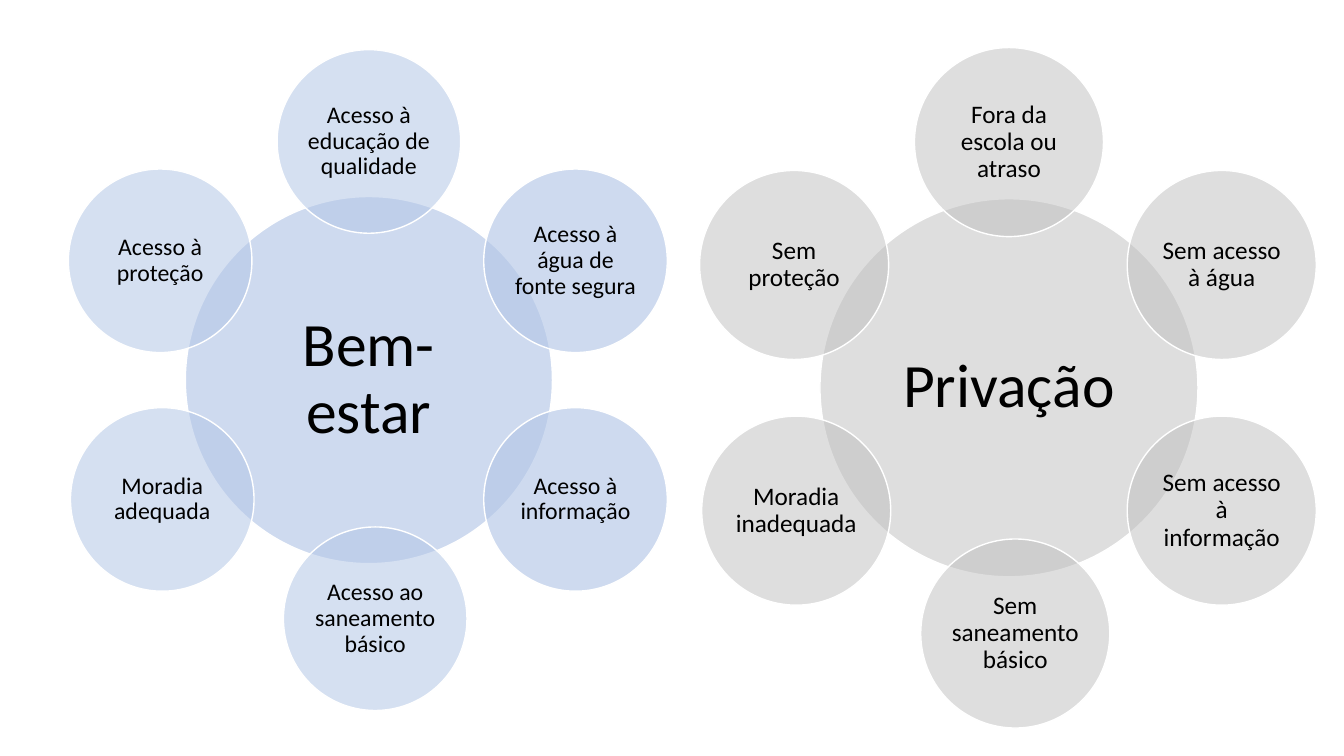
from dataclasses import dataclass
from math import cos, radians, sin

from lxml import etree
from pptx import Presentation
from pptx.dml.color import RGBColor
from pptx.enum.shapes import MSO_SHAPE
from pptx.enum.text import MSO_ANCHOR, PP_ALIGN
from pptx.oxml.ns import qn
from pptx.util import Pt

ELLIPSE = MSO_SHAPE.OVAL
MIDDLE = MSO_ANCHOR.MIDDLE
CENTER = PP_ALIGN.CENTER


@dataclass(frozen=True)
class Theme:
    font: str = "Calibri"
    text: str = "000000"
    outline: str = "FFFFFF"
    well_being: str = "B4C7E7"
    deprivation: str = "BFBFBF"
    hub_size: int = 44
    well_being_size: int = 17
    deprivation_size: int = 18


THEME = Theme()

# Diameters and distances as fractions of the hub's diameter
SATELLITE_RATIO = 0.5
ORBIT_RATIO = 0.65
HEIGHT_RATIO = 2 * ORBIT_RATIO + SATELLITE_RATIO

# Sideways shifts of the six satellites, clockwise from the top
NUDGES = (0, 0, 0, 4.5, 0, -1.5)


def write_text(shape, text, size, color=THEME.text, font=THEME.font):
    frame = shape.text_frame
    frame.word_wrap = True
    frame.vertical_anchor = MIDDLE
    inset = Pt(size * 0.1)
    frame.margin_left = frame.margin_right = inset
    frame.margin_top = frame.margin_bottom = inset
    paragraph = frame.paragraphs[0]
    paragraph.alignment = CENTER
    paragraph.line_spacing = 0.9
    run = paragraph.add_run()
    run.text = text
    run.font.name = font
    run.font.size = Pt(size)
    run.font.color.rgb = RGBColor.from_string(color)


def add_circle(shapes, center_x, center_y, diameter, text, size, color, opacity):
    left, top = center_x - diameter / 2, center_y - diameter / 2
    circle = shapes.add_shape(ELLIPSE, Pt(left), Pt(top), Pt(diameter), Pt(diameter))
    circle.shadow.inherit = False
    circle.fill.solid()
    circle.fill.fore_color.rgb = RGBColor.from_string(color)
    fill_color = circle.fill._xPr.find(qn("a:solidFill"))[0]
    etree.SubElement(fill_color, qn("a:alpha"), val=str(opacity * 1000))
    circle.line.color.rgb = RGBColor.from_string(THEME.outline)
    circle.line.width = Pt(1)
    write_text(circle, text, size)


def add_radial_diagram(slide, box, hub, satellites, size, color, opacity):
    """Place a hub and six overlapping satellites; each satellite is (text, opacity)."""
    left, top, width, height = box
    center_x, center_y = left + width / 2, top + height / 2
    diameter = height / HEIGHT_RATIO
    shapes = slide.shapes.add_group_shape().shapes
    add_circle(shapes, center_x, center_y, diameter, hub, THEME.hub_size, color, opacity)
    for index, (text, satellite_opacity) in enumerate(satellites):
        angle = radians(60 * index - 90)
        orbit = diameter * ORBIT_RATIO
        add_circle(shapes, center_x + orbit * cos(angle) + NUDGES[index],
                   center_y + orbit * sin(angle), diameter * SATELLITE_RATIO,
                   text, size, color, satellite_opacity)


def main():
    presentation = Presentation()
    presentation.slide_width, presentation.slide_height = Pt(960), Pt(540)
    slide = presentation.slides.add_slide(presentation.slide_layouts[6])
    add_radial_diagram(
        slide, (50.5, 35.5, 426, 472), "Bem-estar",
        [("Acesso à educação de qualidade", 55),
         ("Acesso à água de fonte segura", 65),
         ("Acesso à informação", 65),
         ("Acesso ao saneamento básico", 55),
         ("Moradia adequada", 55),
         ("Acesso à proteção", 55)],
        THEME.well_being_size, THEME.well_being, 65)
    add_radial_diagram(
        slide, (501.2, 34, 439, 486), "Privação",
        [(text, 50) for text in (
            "Fora da escola ou atraso", "Sem acesso à água",
            "Sem acesso à informação", "Sem saneamento básico",
            "Moradia inadequada", "Sem proteção")],
        THEME.deprivation_size, THEME.deprivation, 50)
    presentation.save("out.pptx")


if __name__ == "__main__":
    main()
